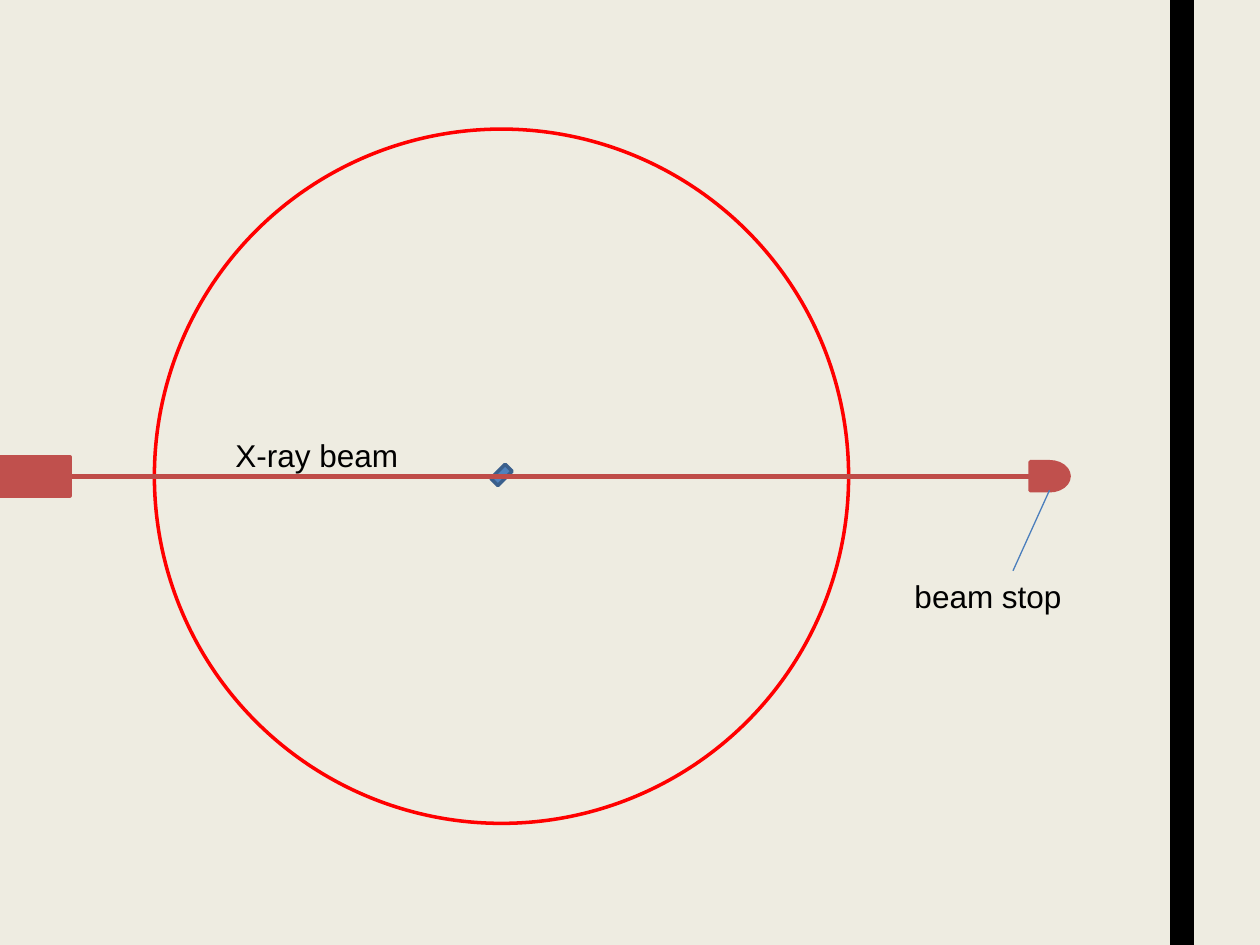
from pptx import Presentation
from pptx.dml.color import RGBColor
from pptx.enum.shapes import MSO_CONNECTOR, MSO_SHAPE
from pptx.oxml.ns import qn
from pptx.util import Inches, Pt
from lxml import etree

OVAL = MSO_SHAPE.OVAL
RECTANGLE = MSO_SHAPE.RECTANGLE
DELAY = MSO_SHAPE.FLOWCHART_DELAY
STRAIGHT = MSO_CONNECTOR.STRAIGHT

CREAM = RGBColor(0xEE, 0xEC, 0xE1)
RED = RGBColor(0xFF, 0x00, 0x00)
BLACK = RGBColor(0x00, 0x00, 0x00)
BRICK = RGBColor(0xC0, 0x50, 0x4D)
BEAM_RED = RGBColor(0xBF, 0x4C, 0x48)
BLUE = RGBColor(0x4F, 0x81, 0xBD)
DARK_BLUE = RGBColor(0x3A, 0x5F, 0x8C)
LEADER_BLUE = RGBColor(0x4B, 0x7E, 0xBC)

BEAM_Y = 3.78
SPHERE_SIZE = 5.51
SAMPLE_X = 3.98

SPHERE = (OVAL, SAMPLE_X, BEAM_Y, SPHERE_SIZE, SPHERE_SIZE, 0, CREAM, RED)
DETECTOR = (RECTANGLE, 9.38, 3.75, 0.16, 7.5, 0, BLACK, BLACK)
SAMPLE = (RECTANGLE, SAMPLE_X, 3.77, 0.08, 0.16, 45, BLUE, DARK_BLUE)
SOURCE = (RECTANGLE, 0.28, BEAM_Y, 0.55, 0.31, 0, BRICK, BRICK)
BEAM_STOP = (DELAY, 8.33, BEAM_Y, 0.31, 0.23, 0, BRICK, BRICK)

BEAM = ((0.55, BEAM_Y), (8.44, BEAM_Y), BEAM_RED, 3, True)
LEADER = ((8.04, 4.53), (8.33, 3.89), LEADER_BLUE, 0.75, False)

BEAM_LABEL = ("X-ray beam", 1.77, 3.41, 1.94)
STOP_LABEL = ("beam stop", 7.16, 4.53, 1.77)


def add_part(page, kind, center_x, center_y, width, height, angle, fill, outline):
    part = page.shapes.add_shape(
        kind, Inches(center_x - width / 2), Inches(center_y - height / 2),
        Inches(width), Inches(height))
    part.rotation = angle
    part.shadow.inherit = False
    part.fill.solid()
    part.fill.fore_color.rgb = fill
    part.line.color.rgb = outline
    part.line.width = Pt(2)


def add_line(page, start, end, color, weight, arrow):
    line = page.shapes.add_connector(
        STRAIGHT, *(Inches(value) for value in start + end))
    line.line.color.rgb = color
    line.line.width = Pt(weight)
    properties = line._element.spPr
    if arrow:
        outline = properties.find(qn("a:ln"))
        etree.SubElement(outline, qn("a:tailEnd"), type="triangle")
    etree.SubElement(properties, qn("a:effectLst"))


def add_label(page, text, left, top, width):
    box = page.shapes.add_textbox(
        Inches(left), Inches(top), Inches(width), Inches(0.51))
    box.text_frame.word_wrap = True
    span = box.text_frame.paragraphs[0].add_run()
    span.text = text
    span.font.name = "Arial"
    span.font.size = Pt(18)
    span.font.color.rgb = BLACK


def main():
    deck = Presentation()
    deck.slide_width, deck.slide_height = Inches(10), Inches(7.5)
    page = deck.slides.add_slide(deck.slide_layouts[6])
    page.background.fill.solid()
    page.background.fill.fore_color.rgb = CREAM

    for part in (SPHERE, DETECTOR, SAMPLE):
        add_part(page, *part)
    add_line(page, *BEAM)
    add_part(page, *SOURCE)
    add_label(page, *BEAM_LABEL)
    add_part(page, *BEAM_STOP)
    add_label(page, *STOP_LABEL)
    add_line(page, *LEADER)
    deck.save("out.pptx")


if __name__ == "__main__":
    main()
